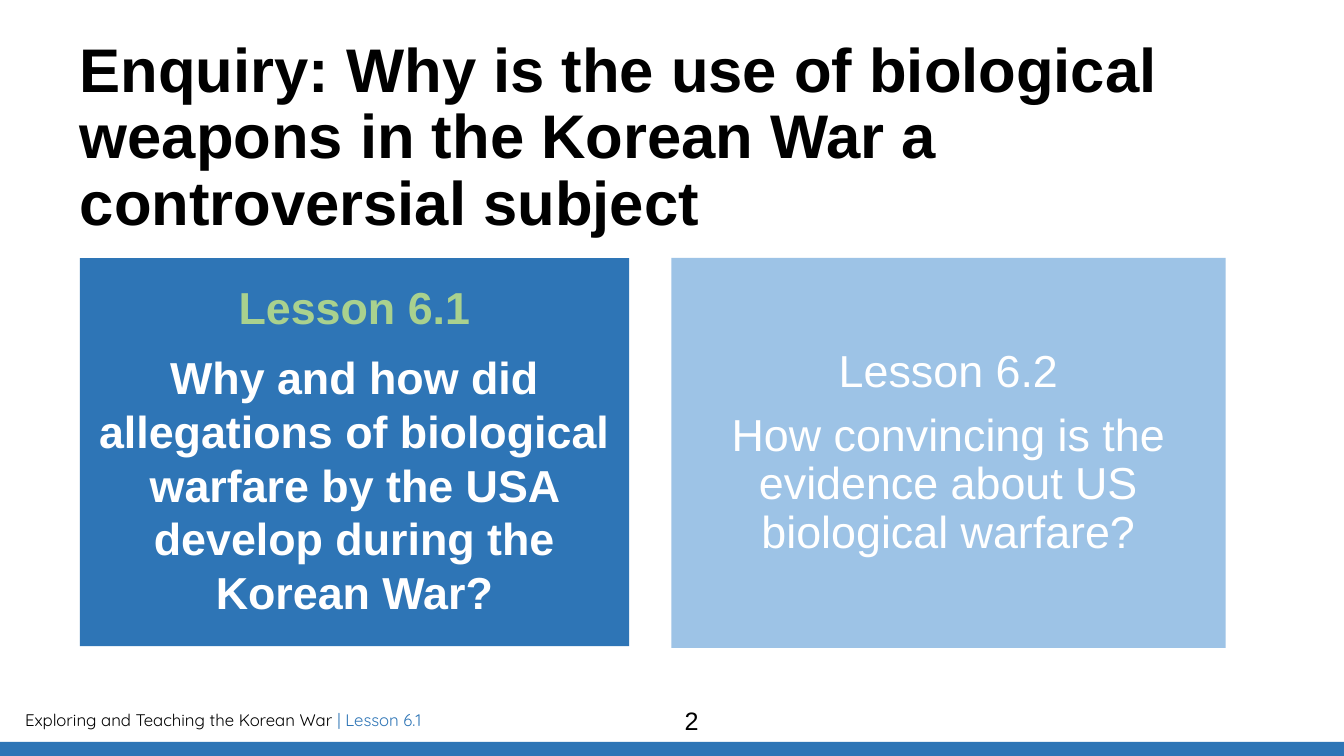
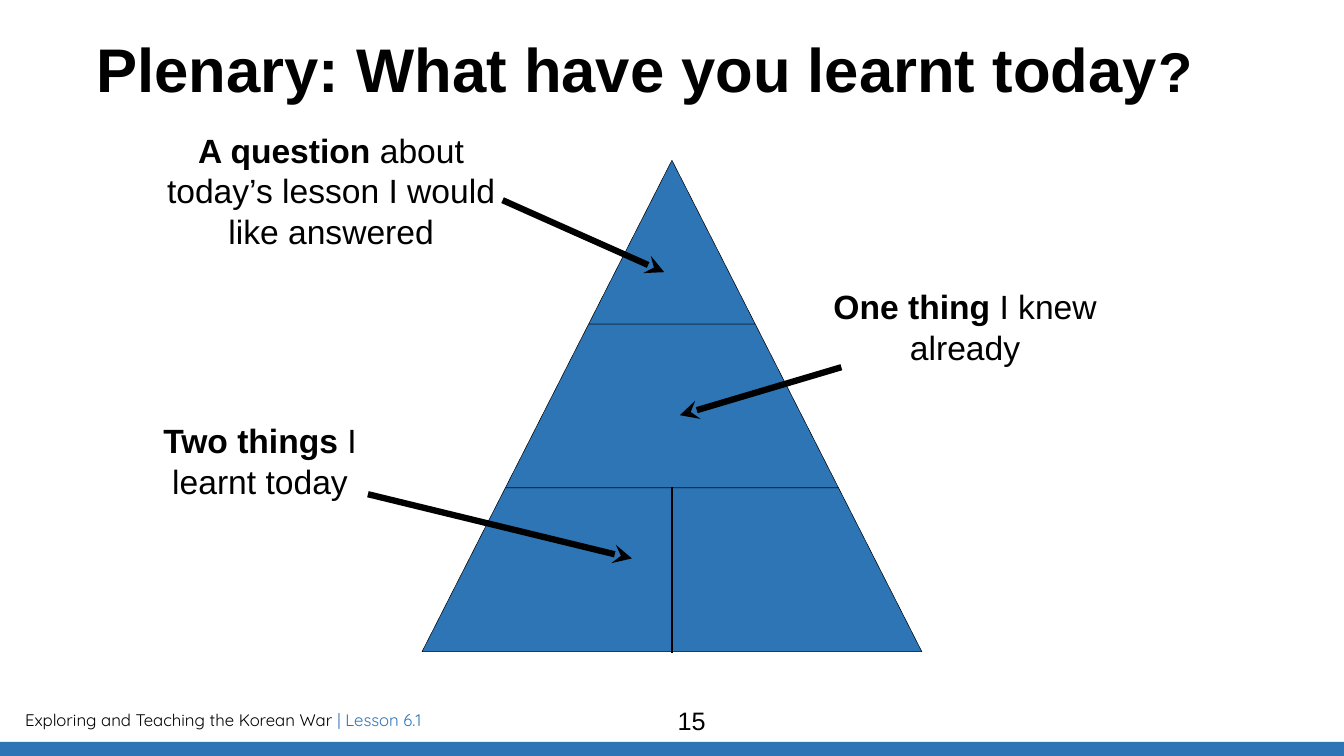
from pptx import Presentation
from pptx import util as u
from pptx.dml.color import RGBColor
from pptx.enum import shapes, text
from pptx.oxml.ns import qn
from lxml import etree


class Theme:
    ink = RGBColor(0, 0, 0)
    white = RGBColor(255, 255, 255)
    blue = RGBColor(0x2E, 0x75, 0xB6)
    pale = RGBColor(0x9D, 0xC3, 0xE6)
    green = RGBColor(0xA9, 0xD1, 0x8E)
    face, foot = "Arial", "Quicksand"
    title, mark, card, note, page, small = 44, 40, 32, 24, 18, 12


T = Theme
LEFT, MID = text.PP_ALIGN.LEFT, text.PP_ALIGN.CENTER


def write(frame, paras, pad=(7.2, 3.6), anchor=text.MSO_ANCHOR.TOP):
    """Fill a frame; each paragraph is (format, runs), each run (words, size, colour, bold, face)."""
    look = dict(word_wrap=True, auto_size=text.MSO_AUTO_SIZE.NONE, vertical_anchor=anchor,
                margin_left=u.Pt(pad[0]), margin_right=u.Pt(pad[0]),
                margin_top=u.Pt(pad[1]), margin_bottom=u.Pt(pad[1]))
    for key, val in look.items():
        setattr(frame, key, val)
    for n, (form, runs) in enumerate(paras):
        para = frame.add_paragraph() if n else frame.paragraphs[0]
        for key, val in form.items():
            setattr(para, key, val)
        for words, size, hue, bold, face in runs:
            run = para.add_run()
            run.text = words
            for key, val in dict(size=u.Pt(size), bold=bold, name=face).items():
                setattr(run.font, key, val)
            run.font.color.rgb = hue


def paint(shape, fill, line=None):
    """Give a shape a flat fill and, if asked, a thin outline."""
    shape.shadow.inherit = False
    shape.fill.solid()
    shape.fill.fore_color.rgb = fill
    if line:
        shape.line.color.rgb = T.ink
        shape.line.width = u.Pt(line)
    else:
        shape.line.fill.background()


deck = Presentation()
deck.slide_width, deck.slide_height = u.Pt(960), u.Pt(540)

# Shared frame: footer, band, title, page number
heads = [
    (57, 104.4, "2", [("Enquiry: Why is the use of biological weapons in the Korean War "
                       "a controversial subject", T.title)]),
    (69, 58.3, "15", [("Plenary: What have you learnt today", T.title), ("?", T.mark)]),
]
pages = []
for left, high, num, parts in heads:
    page = deck.slides.add_slide(deck.slide_layouts[5])
    pages.append(page)
    foot = page.shapes.add_textbox(u.Pt(10.8), u.Pt(503.3), u.Pt(563), u.Pt(21.6))
    write(foot.text_frame, [({}, [
        ("Exploring and Teaching the Korean War ", T.small, T.ink, False, T.foot),
        ("| Lesson 6.1", T.small, T.blue, False, T.foot)])])
    band = page.shapes.add_shape(shapes.MSO_SHAPE.RECTANGLE, 0, u.Pt(530), u.Pt(960), u.Pt(10))
    paint(band, T.blue)
    title = page.shapes.title
    title.left, title.top, title.width, title.height = map(u.Pt, (left, 28, 828, high))
    write(title.text_frame, [(dict(alignment=LEFT, line_spacing=0.9),
                              [(words, size, T.ink, True, T.face) for words, size in parts])],
          pad=(0, 0))
    box = page.shapes.add_textbox(u.Pt(311.5), u.Pt(500.4), u.Pt(365), u.Pt(29))
    write(box.text_frame, [(dict(alignment=MID), [(num, T.page, T.ink, False, T.face)])])

plan, recap = pages

# Lesson cards
cards = [
    (57, 392.4, 277.2, T.blue, T.green, True, 1.0, "Lesson 6.1",
     "Why and how did allegations of biological warfare by the USA develop during the Korean War?"),
    (479.5, 396, 278.6, T.pale, T.white, False, 0.9, "Lesson 6.2",
     "How convincing is the evidence about US biological warfare?"),
]
for left, wide, high, fill, hue, bold, gap, name, ask in cards:
    card = plan.shapes.add_shape(shapes.MSO_SHAPE.RECTANGLE,
                                 u.Pt(left), u.Pt(184.3), u.Pt(wide), u.Pt(high))
    paint(card, fill)
    write(card.text_frame, [
        (dict(alignment=MID, line_spacing=0.9, space_after=u.Pt(11.2)),
         [(name, T.card, hue, bold, T.face)]),
        (dict(alignment=MID, line_spacing=gap), [(ask, T.card, T.white, bold, T.face)]),
    ], pad=(10, 10), anchor=text.MSO_ANCHOR.MIDDLE)

# Pyramid: three tiers that widen by an equal step
axis, peak, rise, step = 480, 114.5, 117, 59.5
for tier in range(3):
    top, base = peak + tier * rise, peak + (tier + 1) * rise
    near, far = tier * step, (tier + 1) * step
    dots = [(axis - near, top), (axis + near, top), (axis + far, base), (axis - far, base)]
    dots = [(u.Pt(x), u.Pt(y)) for x, y in dots]
    form = recap.shapes.build_freeform(*dots[0])
    form.add_line_segments(dots[1:], close=True)
    paint(form.convert_to_shape(), T.blue, 0.37)

# Notes beside the pyramid
notes = [
    (111.6, 89.3, 249.8, 94.3, "A question ", "about today’s lesson I would like answered"),
    (584.6, 200.9, 209.5, 65.5, "One thing ", "I knew already"),
    (101.5, 296.6, 168.5, 65.5, "Two things ", "I learnt today"),
]
for left, top, wide, high, lead, rest in notes:
    box = recap.shapes.add_textbox(u.Pt(left), u.Pt(top), u.Pt(wide), u.Pt(high))
    write(box.text_frame, [(dict(alignment=MID), [
        (lead, T.note, T.ink, True, T.face), (rest, T.note, T.ink, False, T.face)])])

# Divider of the lowest tier, then the arrows
lines = [
    (480, 347.8, 480, 466.6, 1, False),
    (359, 143, 474.5, 194.4, 4.5, True),
    (601, 262.3, 485.6, 296.6, 4.5, True),
    (262.8, 353, 451.4, 398.9, 4.5, True),
]
for *ends, wide, head in lines:
    line = recap.shapes.add_connector(shapes.MSO_CONNECTOR.STRAIGHT, *map(u.Pt, ends))
    line.line.color.rgb = T.ink
    line.line.width = u.Pt(wide)
    props = line._element.spPr
    if head:
        etree.SubElement(props.find(qn("a:ln")), qn("a:tailEnd"), type="stealth")
    etree.SubElement(props, qn("a:effectLst"))

deck.save("out.pptx")
